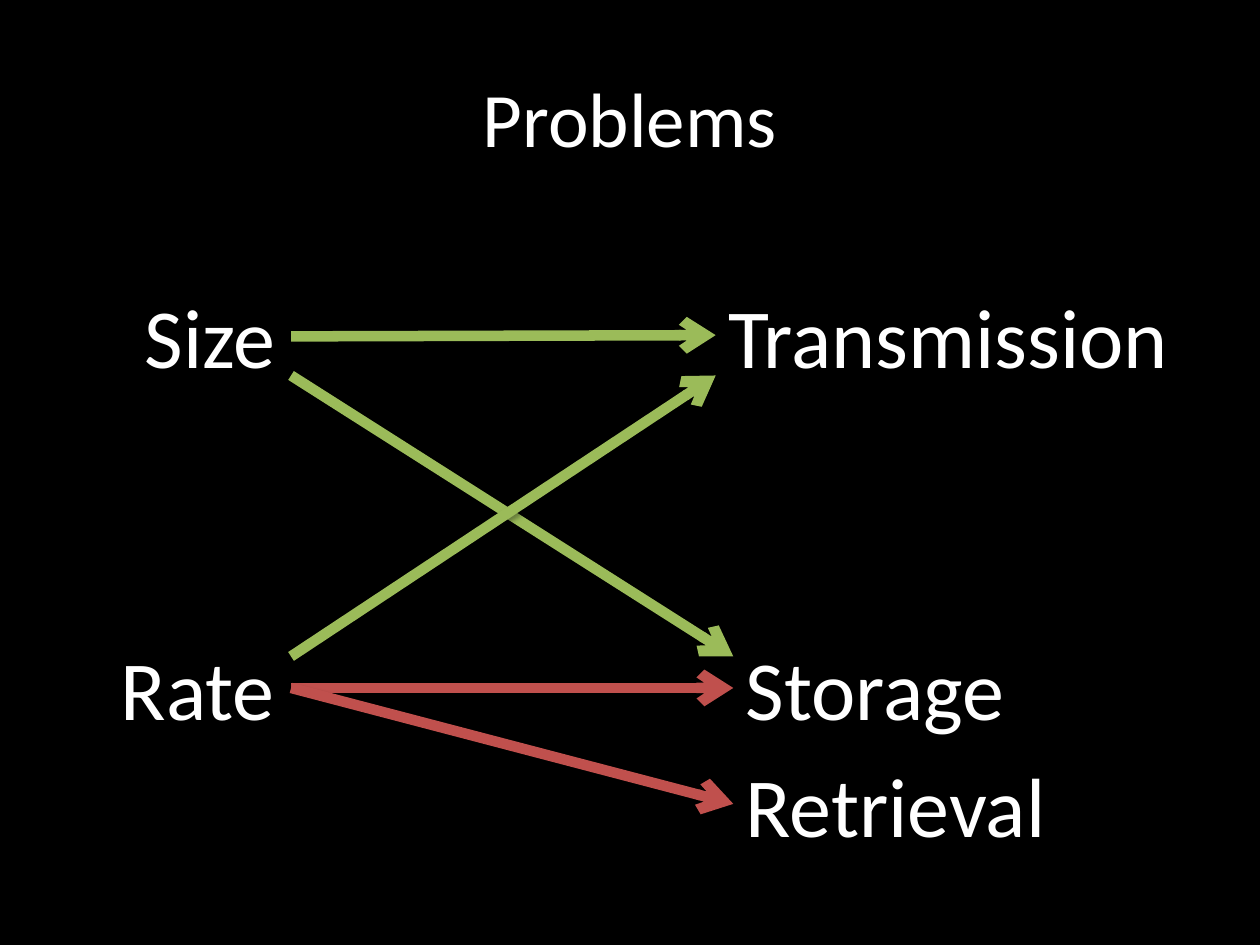
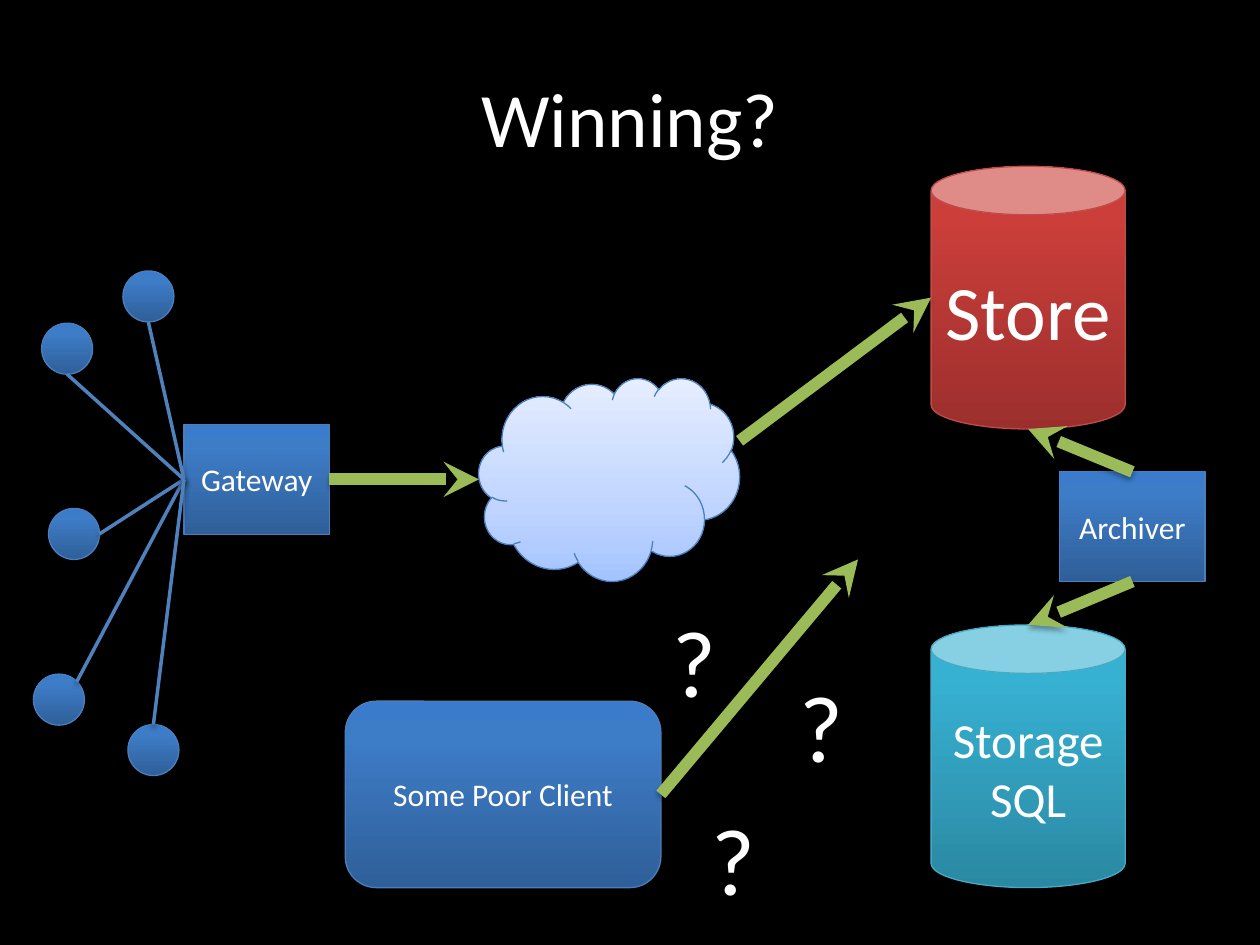
from copy import deepcopy
from dataclasses import dataclass

from lxml import etree
from pptx import Presentation
from pptx import util as u
from pptx.dml.color import RGBColor
from pptx.enum import shapes, text
from pptx.oxml.ns import qn

COLUMNS, ROWS = 100, 75
CELL = u.Inches(0.1)
TITLE_ONLY = 5
KIND = shapes.MSO_SHAPE

LEFT, RIGHT, TOP, BOTTOM = (0, 0.5), (1, 0.5), (0.5, 0), (0.5, 1)
TOP_RIGHT = (0.85, 0.15)


@dataclass(frozen=True)
class Paint:
    """Gradient stops from the bottom up, as (share, colour), and an outline."""
    stops: tuple
    line: str


@dataclass(frozen=True)
class Theme:
    font: str = "Calibri"
    background: str = "000000"
    ink: str = "FFFFFF"
    good: str = "9BBB59"
    bad: str = "C0504D"
    wire: str = "4F81BD"
    blue: Paint = Paint(((0, "2F5F99"), (0.8, "3D7CC7"), (1, "3A7CCB")), "4B7EBC")
    red: Paint = Paint(((0, "9C2F2D"), (0.8, "CB3E3A"), (1, "CE3B37")), "BF4C48")
    teal: Paint = Paint(((0, "2A88A2"), (0.8, "37B1D2"), (1, "34B4D6")), "46AAC5")
    pale: Paint = Paint(((0, "A4C4FF"), (0.35, "BFD4FF"), (1, "E6EEFF")), "4B7EBC")
    title: float = 44
    label: float = 48
    doubt: float = 54
    body: float = 18
    second: float = 28
    outline: float = 0.75
    wire_width: float = 2
    problem_width: float = 6
    flow_width: float = 6.75


THEME = Theme()


def cells(*counts):
    return [round(count * CELL) for count in counts]


def point(box, share):
    """Grid position at a share of a box's width and height."""
    left, top, width, height = box
    return left + share[0] * width, top + share[1] * height


def colour(code):
    return RGBColor.from_string(code)


def write(shape, words, size=THEME.body, align=text.PP_ALIGN.CENTER,
          anchor=text.MSO_ANCHOR.MIDDLE, wrap=True):
    frame = shape.text_frame
    frame.word_wrap = wrap
    frame.vertical_anchor = anchor
    para = frame.paragraphs[0]
    para.alignment = align
    span = para.add_run()
    span.text = words
    span.font.name = THEME.font
    span.font.size = u.Pt(size)
    span.font.color.rgb = colour(THEME.ink)


def add_shadow(shape, alpha=35, distance=1.8):
    """Append a downward shadow; the outline must be set beforehand."""
    effects = etree.SubElement(shape._element.spPr, qn("a:effectLst"))
    outer = etree.SubElement(effects, qn("a:outerShdw"), blurRad=str(u.Pt(3.1)),
                             dist=str(u.Pt(distance)), dir="5400000", rotWithShape="0")
    black = etree.SubElement(outer, qn("a:srgbClr"), val="000000")
    etree.SubElement(black, qn("a:alpha"), val=str(alpha * 1000))


def fill_gradient(shape, stops):
    shape.fill.gradient()
    shape.fill.gradient_angle = 90
    stop_list = shape._element.spPr.find(qn("a:gradFill")).find(qn("a:gsLst"))
    while len(stop_list) < len(stops):
        stop_list.append(deepcopy(stop_list[0]))
    for stop, (share, code) in zip(shape.fill.gradient_stops, stops):
        stop.position = share
        stop.color.rgb = colour(code)


def add_node(parent, kind, box, paint=THEME.blue, words="", size=THEME.body,
             **shadow):
    shape = parent.shapes.add_shape(kind, *cells(*box))
    fill_gradient(shape, paint.stops)
    shape.line.color.rgb = colour(paint.line)
    shape.line.width = u.Pt(THEME.outline)
    add_shadow(shape, **shadow)
    if words:
        write(shape, words, size=size)


def add_line(parent, start, end, code, width, head=None, **shadow):
    line = parent.shapes.add_connector(
        shapes.MSO_CONNECTOR.STRAIGHT, *cells(*start, *end))
    line.line.color.rgb = colour(code)
    line.line.width = u.Pt(width)
    if head:
        etree.SubElement(line.line._get_or_add_ln(), qn("a:tailEnd"), type=head)
    add_shadow(line, **shadow)


def add_flow(page, start, end):
    add_line(page, start, end, THEME.good, THEME.flow_width, head="stealth")


def add_label(page, words, box, size=THEME.label):
    label = page.shapes.add_textbox(*cells(*box))
    write(label, words, size=size, align=text.PP_ALIGN.LEFT,
          anchor=text.MSO_ANCHOR.TOP, wrap=False)
    label.text_frame.auto_size = text.MSO_AUTO_SIZE.SHAPE_TO_FIT_TEXT


def add_sensor(page, left, top, side, hub):
    """A small circle grouped with the wire that joins it to the hub."""
    group = page.shapes.add_group_shape()
    box = (left, top, 4.05, 4.05)
    add_node(group, KIND.OVAL, box)
    add_line(group, hub, point(box, side), THEME.wire, THEME.wire_width,
             alpha=38, distance=1.6)


def add_page(deck, heading):
    page = deck.slides.add_slide(deck.slide_layouts[TITLE_ONLY])
    title = page.shapes.title
    title.left, title.top, title.width, title.height = cells(5, 3, 90, 12.5)
    write(title, heading, size=THEME.title)
    return page


def build_problems(deck):
    page = add_page(deck, "Problems")
    first_row, second_row, third_row, height = 22.1, 50, 59.3, 9.1
    start, near, far = 23.1, 56.8, 58.2
    for words, left, top, width in (
            ("Size", 10.5, first_row, 12.7),
            ("Transmission", near, first_row, 37.9),
            ("Storage", far, second_row, 23),
            ("Rate", 8.6, second_row, 14.5),
            ("Retrieval", far, third_row, 26.3)):
        add_label(page, words, (left, top, width, height))
    for from_row, end, code in (
            (29.8, (far, 52.1), THEME.good),
            (26.7, (near, 26.6), THEME.good),
            (52.1, (near, 29.8), THEME.good),
            (54.6, (far, 54.6), THEME.bad),
            (54.6, (far, 63.8), THEME.bad)):
        add_line(page, (start, from_row), end, code, THEME.problem_width,
                 head="arrow")


def build_winning(deck):
    page = add_page(deck, "Winning?")
    cloud = (38, 30, 20.7, 16.1)
    gateway = (14.6, 33.7, 11.55, 8.7)
    archiver = (84.1, 37.45, 11.55, 8.7)
    store = (73.9, 13.2, 15.4, 20.85)
    database = (73.9, 49.6, 15.4, 20.85)
    client = (27.4, 55.65, 25.05, 14.8)

    add_node(page, KIND.CLOUD, cloud, THEME.pale, alpha=38, distance=1.6)
    add_node(page, KIND.CAN, store, THEME.red, "Store", THEME.title)
    add_node(page, KIND.RECTANGLE, gateway, words="Gateway")
    for left, top, side in ((9.75, 21.5, BOTTOM), (2.65, 53.5, TOP_RIGHT),
                            (3.85, 40.35, RIGHT), (3.3, 25.65, BOTTOM),
                            (10.15, 57.5, TOP)):
        add_sensor(page, left, top, side, point(gateway, LEFT))
    add_flow(page, point(gateway, RIGHT), point(cloud, LEFT))
    add_flow(page, point(cloud, (1, 0.31)), point(store, LEFT))
    add_node(page, KIND.CAN, database, THEME.teal, "Storage SQL", THEME.second)
    add_node(page, KIND.RECTANGLE, archiver, words="Archiver")
    add_flow(page, point(archiver, TOP), point(store, BOTTOM))
    add_flow(page, point(archiver, BOTTOM), point(database, TOP))
    for left, top in ((62.5, 52.5), (52.4, 47.4), (55.5, 63.1)):
        add_label(page, "?", (left, top, 5.5, 10.1), THEME.doubt)
    add_node(page, KIND.ROUNDED_RECTANGLE, client, words="Some Poor Client")
    add_flow(page, point(client, RIGHT), (68.1, 44.4))


def main():
    deck = Presentation()
    deck.slide_width, deck.slide_height = cells(COLUMNS, ROWS)
    backdrop = deck.slide_master.background.fill
    backdrop.solid()
    backdrop.fore_color.rgb = colour(THEME.background)
    build_problems(deck)
    build_winning(deck)
    deck.save("out.pptx")


if __name__ == "__main__":
    main()
